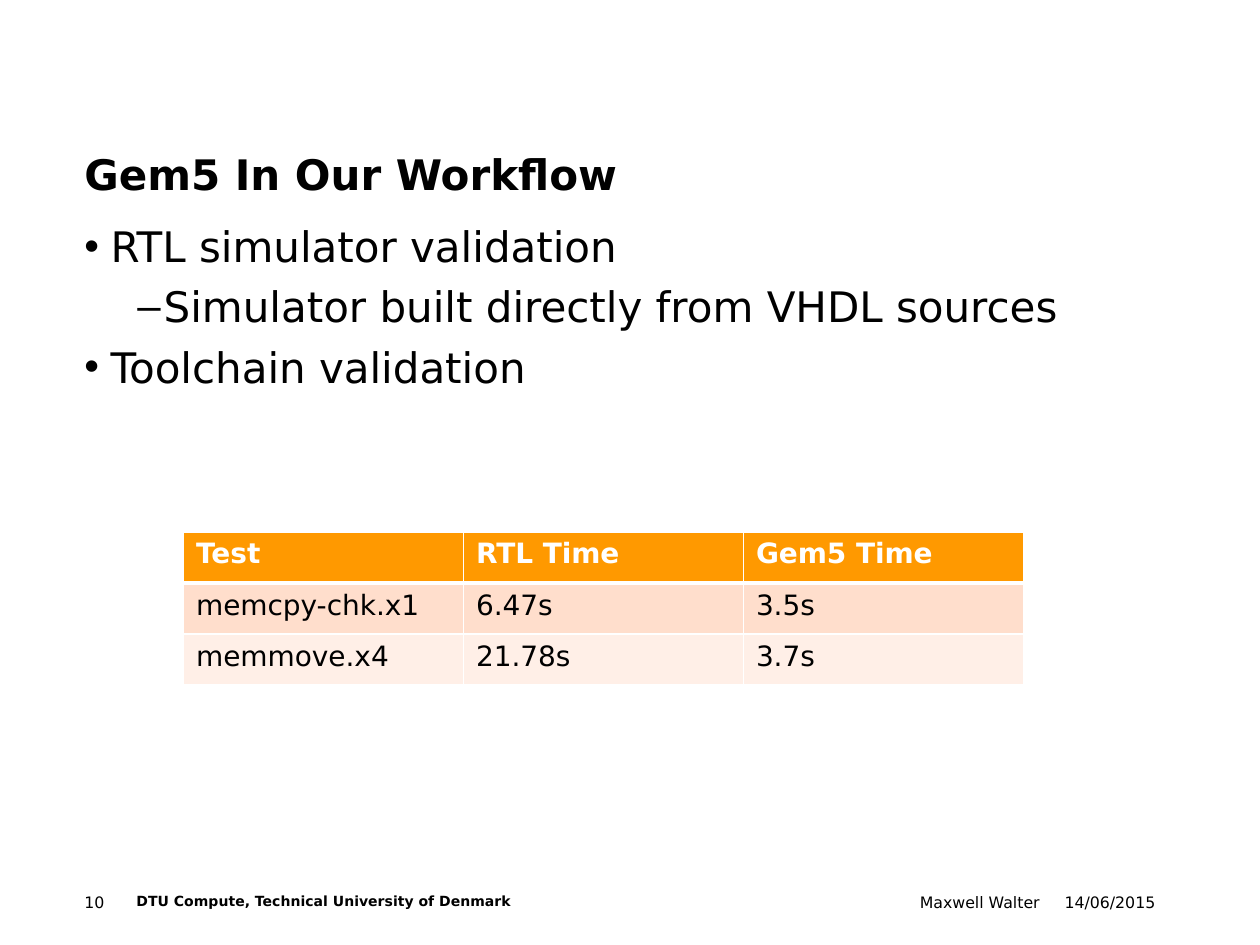
import pptx
import pptx.dml.color
import pptx.enum.text
import pptx.oxml
import pptx.oxml.ns
import pptx.util
from lxml import etree

Cm = pptx.util.Cm
Pt = pptx.util.Pt
ALIGN = pptx.enum.text.PP_ALIGN
ANCHOR = pptx.enum.text.MSO_ANCHOR
FONT = "DejaVu Sans"
BLACK, WHITE, ORANGE = "000000", "FFFFFF", "FF9900"
BANDS = ("FFDECC", "FFEFE7")


def color(value):
    """Turn a hex string into a colour."""
    return pptx.dml.color.RGBColor.from_string(value)


def add_run(p, text, size, bold=False, fill=BLACK):
    """Append a formatted run to a paragraph."""
    r = p.add_run()
    r.text = text
    r.font.name = FONT
    r.font.size = Pt(size)
    r.font.bold = bold
    r.font.color.rgb = color(fill)


def place(sp, box, anchor=ANCHOR.TOP):
    """Move a text shape to its box in cm and return its bare frame."""
    sp.left, sp.top, sp.width, sp.height = map(Cm, box)
    tf = sp.text_frame
    tf.margin_left = tf.margin_top = tf.margin_right = tf.margin_bottom = 0
    tf.word_wrap = True
    tf.auto_size = pptx.enum.text.MSO_AUTO_SIZE.NONE
    tf.vertical_anchor = anchor
    return tf


def set_bullet(p, char, indent, hang):
    """Give a paragraph a hanging bullet."""
    pPr = p._p.get_or_add_pPr()
    pPr.set("marL", str(Cm(indent)))
    pPr.set("indent", str(-Cm(hang)))
    etree.SubElement(pPr, pptx.oxml.ns.qn("a:buChar")).set("char", char)


def add_title(slide, box, text):
    """Fill the title placeholder."""
    p = place(slide.shapes.title, box, ANCHOR.BOTTOM).paragraphs[0]
    p.alignment = ALIGN.LEFT
    add_run(p, text, 24, True)


def add_body(slide, box, items):
    """Fill the body placeholder with (level, text) items."""
    tf = place(slide.placeholders[1], box)
    for i, (level, text) in enumerate(items):
        p = tf.add_paragraph() if i else tf.paragraphs[0]
        p.level = level
        p.space_before = Pt(5.6 if i else 0)
        set_bullet(p, "•–"[level], 0.53 + 1.07 * level, 0.53)
        add_run(p, text, 24)


def set_borders(cell, bottom):
    """Draw white cell borders, with the bottom width in points."""
    tcPr = cell._tc.get_or_add_tcPr()
    for side, width in zip("LRTB", (1, 1, 1, bottom)):
        tcPr.append(pptx.oxml.parse_xml(
            f'<a:ln{side} {pptx.oxml.ns.nsdecls("a")} w="{Pt(width)}"><a:solidFill>'
            f'<a:srgbClr val="{WHITE}"/></a:solidFill></a:ln{side}>'))


def add_timings(slide, box, rows):
    """Add the timing table, its first row being the header."""
    table = slide.shapes.add_table(len(rows), len(rows[0]), *map(Cm, box)).table
    for i, row in enumerate(rows):
        head = i == 0
        for j, text in enumerate(row):
            cell = table.cell(i, j)
            set_borders(cell, 3 if i < 1 else 1)
            cell.fill.solid()
            cell.fill.fore_color.rgb = color(ORANGE if head else BANDS[(i - 1) % 2])
            add_run(cell.text_frame.paragraphs[0], text, 16, head,
                    WHITE if head else BLACK)


def add_footer(slide, box):
    """Add the page number, institution, author and date."""
    left, top, width, height = box
    parts = (
        (0, 0.85, "10", 9, False, ALIGN.LEFT),
        (1.05, 10.26, "DTU Compute, Technical University of Denmark", 8, True, ALIGN.LEFT),
        (width - 9.95, 7.62, "Maxwell Walter", 9, False, ALIGN.RIGHT),
        (width - 2.13, 2.13, "14/06/2015", 9, False, ALIGN.RIGHT),
    )
    for x, w, text, size, bold, align in parts:
        sp = slide.shapes.add_textbox(0, 0, 0, 0)
        p = place(sp, (left + x, top, w, height)).paragraphs[0]
        p.alignment = align
        add_run(p, text, size, bold)


def main():
    """Build and save the slide."""
    prs = pptx.Presentation()
    prs.slide_width, prs.slide_height = Cm(25.4), Cm(19.05)
    slide = prs.slides.add_slide(prs.slide_layouts[1])
    add_footer(slide, (1.7, 17.99, 21.59, 0.85))
    add_title(slide, (1.7, 0.85, 21.59, 3.17), "Gem5 In Our Workflow")
    add_body(slide, (1.7, 4.45, 21.59, 12.67), (
        (0, "RTL simulator validation"),
        (1, "Simulator built directly from VHDL sources"),
        (0, "Toolchain validation"),
    ))
    add_timings(slide, (3.7, 10.72, 16.93, 3.09), (
        ("Test", "RTL Time", "Gem5 Time"),
        ("memcpy-chk.x1", "6.47s", "3.5s"),
        ("memmove.x4", "21.78s", "3.7s"),
    ))
    prs.save("out.pptx")


if __name__ == "__main__":
    main()
